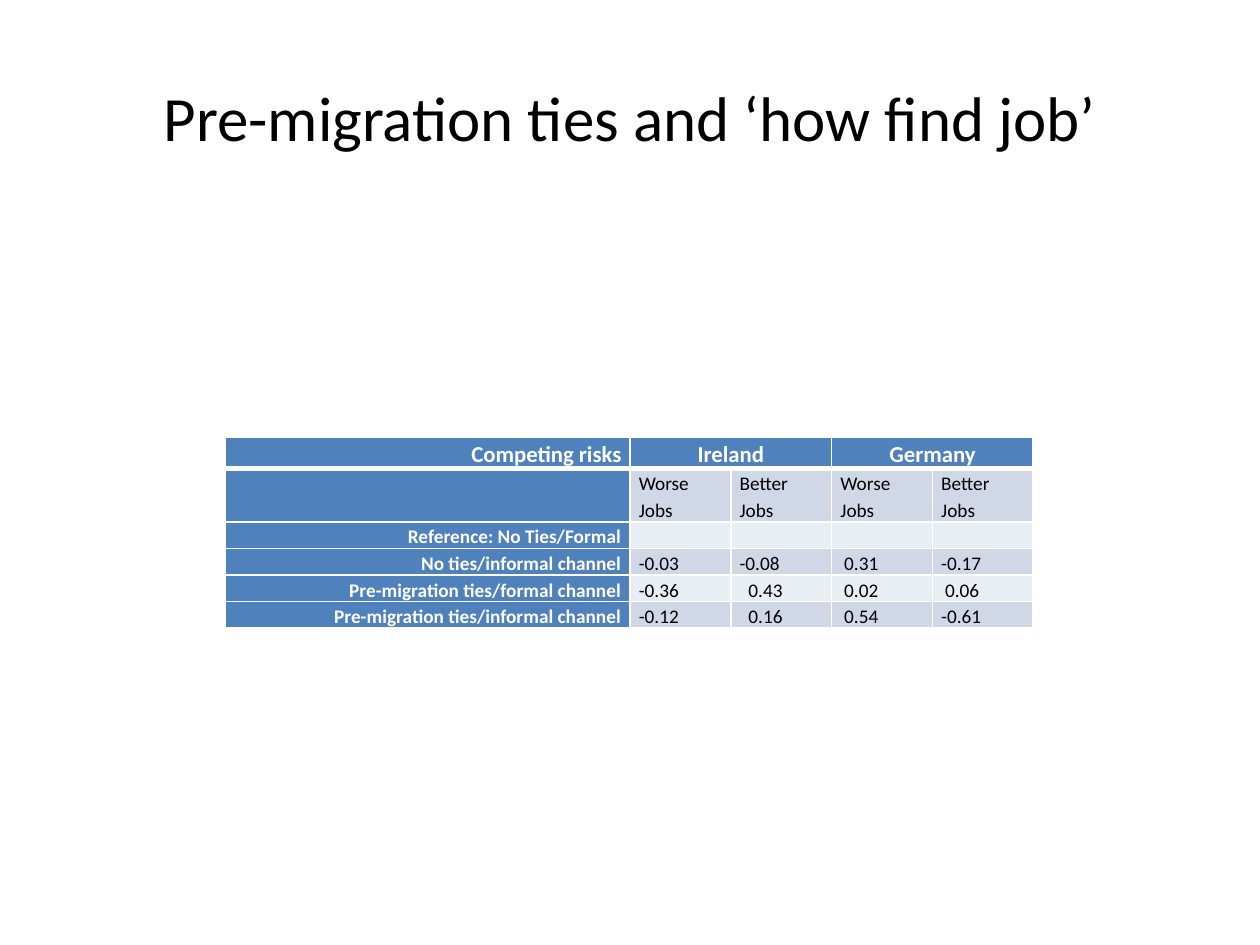
from lxml import etree
from pptx import Presentation
from pptx import util as u
from pptx.dml.color import RGBColor
from pptx.enum import text
from pptx.oxml import ns

WHITE = RGBColor(0xFF, 0xFF, 0xFF)
BLACK = RGBColor(0, 0, 0)
BLUE = RGBColor(0x4F, 0x81, 0xBD)
BANDS = (RGBColor(0xD0, 0xD8, 0xE8), RGBColor(0xE9, 0xED, 0xF4))
LEFT, CENTER, RIGHT = text.PP_ALIGN.LEFT, text.PP_ALIGN.CENTER, text.PP_ALIGN.RIGHT

COUNTRIES = ("Ireland", "Germany")
RISKS = [
    ("", "Worse Jobs", "Better\nJobs", "Worse Jobs", "Better\nJobs"),
    ("Reference: No Ties/Formal", "", "", "", ""),
    ("No ties/informal channel", "-0.03", "-0.08", "0.31", "-0.17"),
    ("Pre-migration ties/formal channel", "-0.36", "0.43", "0.02", "0.06"),
    ("Pre-migration ties/informal channel", "-0.12", "0.16", "0.54", "-0.61"),
]


def write(frame, wording, size=11, color=BLACK, bold=False, align=LEFT, spacing=1.15, font="Calibri"):
    for index, line in enumerate(wording.split("\n")):
        paragraph = frame.add_paragraph() if index else frame.paragraphs[0]
        paragraph.alignment = align
        paragraph.line_spacing = spacing
        if line:
            run = paragraph.add_run()
            run.text = line
            run.font.name = font
            run.font.size = u.Pt(size)
            run.font.bold = bold
            run.font.color.rgb = color
        else:
            etree.SubElement(paragraph._p, ns.qn("a:endParaRPr"), sz=str(size * 100))


class Deck:
    def __init__(self, slide):
        self.slide = slide

    def title(self, wording, left, top, width, height):
        box = self.slide.shapes.add_textbox(*map(u.Inches, (left, top, width, height)))
        box.text_frame.word_wrap = True
        box.text_frame.vertical_anchor = text.MSO_ANCHOR.MIDDLE
        write(box.text_frame, wording, size=36, align=CENTER, spacing=1.0)

    def table(self, left, top, widths, heights):
        place = map(u.Inches, (left, top, sum(widths), sum(heights)))
        table = self.slide.shapes.add_table(len(heights), len(widths), *place).table
        for column, width in zip(table.columns, widths):
            column.width = u.Inches(width)
        for row, height in zip(table.rows, heights):
            row.height = u.Inches(height)
        return table

    def cell(self, cell, wording, fill, indent=0, header=False, below=1, **style):
        cell.margin_left = u.Inches(0.07 + indent)
        cell.margin_right = u.Inches(0.07)
        cell.margin_top = cell.margin_bottom = 0
        if header:
            style = {"color": WHITE, "bold": True, "align": RIGHT, **style}
        write(cell.text_frame, wording, **style)
        self.borders(cell, below)
        cell.fill.solid()
        cell.fill.fore_color.rgb = fill

    def borders(self, cell, below):
        properties = cell._tc.get_or_add_tcPr()
        for side, weight in zip("LRTB", (1, 1, 1, below)):
            line = etree.SubElement(properties, ns.qn(f"a:ln{side}"), w=str(u.Pt(weight)))
            paint = etree.SubElement(line, ns.qn("a:solidFill"))
            etree.SubElement(paint, ns.qn("a:srgbClr"), val=str(WHITE))


def main():
    presentation = Presentation()
    presentation.slide_width = u.Inches(10)
    presentation.slide_height = u.Inches(7.5)
    deck = Deck(presentation.slides.add_slide(presentation.slide_layouts[6]))
    deck.title("Pre-migration ties and ‘how find job’", 0.5, 0.3, 9, 1.25)

    table = deck.table(1.79, 3.47, [3.21] + [0.8] * 4, [0.23, 0.4] + [0.19] * 4)
    heading = {"size": 13, "header": True, "below": 3}
    deck.cell(table.cell(0, 0), "Competing risks", BLUE, **heading)
    for index, country in enumerate(COUNTRIES):
        first, last = (table.cell(0, 2 * index + offset) for offset in (1, 2))
        first.merge(last)
        deck.cell(first, country, BLUE, align=CENTER, **heading)
        deck.cell(last, "", BLUE, **heading)

    for row, (label, *values) in enumerate(RISKS, start=1):
        deck.cell(table.cell(row, 0), label, BLUE, header=True)
        for column, value in enumerate(values, start=1):
            unsigned = value[:1].isdigit()
            indent = (0.07 if column == 2 else 0.03) if unsigned else 0
            deck.cell(table.cell(row, column), value, BANDS[(row - 1) % 2], indent)

    presentation.save("out.pptx")


if __name__ == "__main__":
    main()
